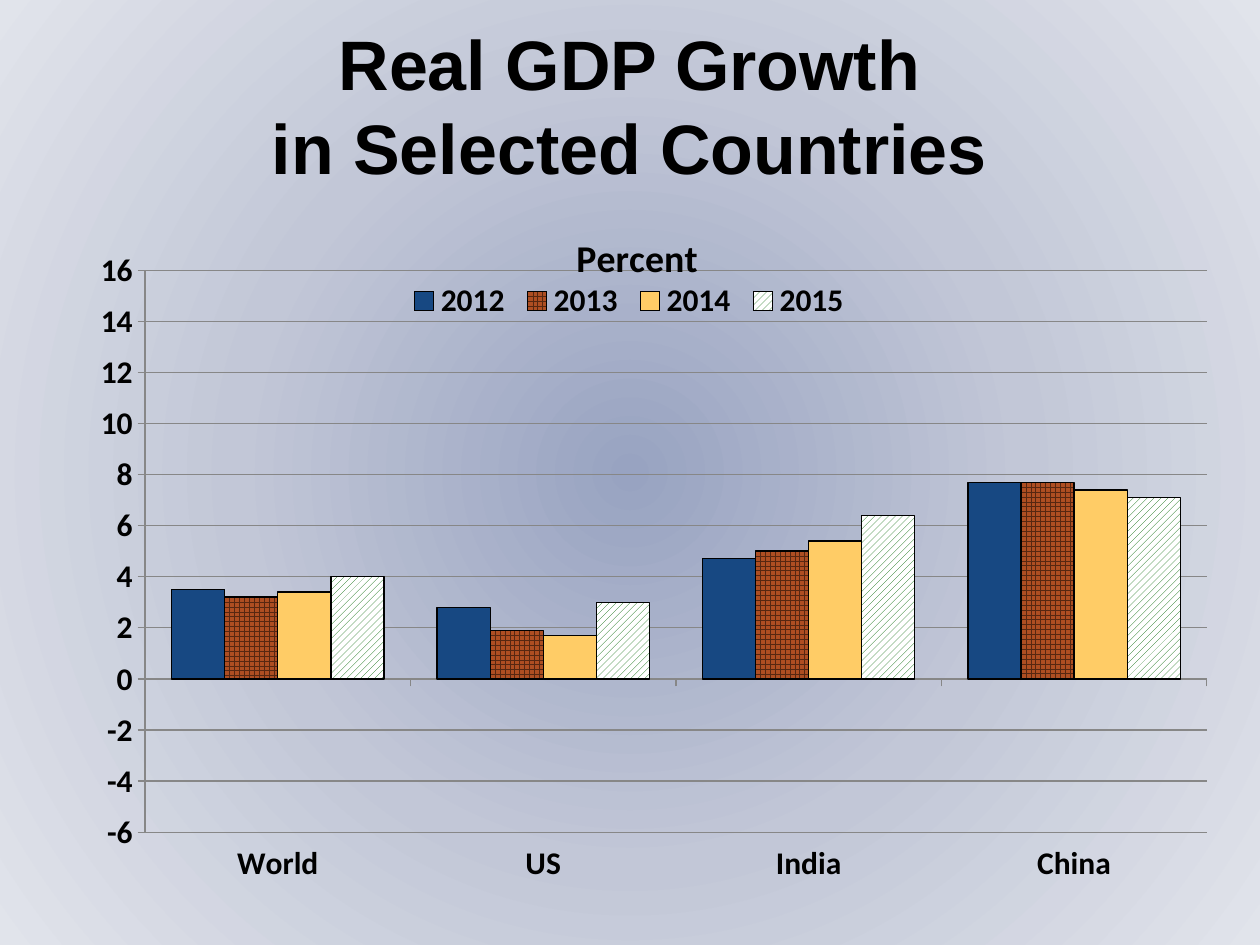
from lxml.etree import SubElement
from pptx import Presentation
from pptx.chart.data import CategoryChartData
from pptx.dml.color import RGBColor
from pptx.enum.chart import XL_CHART_TYPE, XL_LEGEND_POSITION, XL_TICK_LABEL_POSITION, XL_TICK_MARK
from pptx.enum.dml import MSO_PATTERN
from pptx.enum.text import MSO_ANCHOR, PP_ALIGN
from pptx.oxml.ns import qn
from pptx.util import Inches, Pt

COUNTRIES = ["World", "US", "India", "China"]
# year: growth, fill colour, pattern, pattern background
GROWTH = {
    "2012": ([3.5, 2.8, 4.7, 7.7], "174882", None, None),
    "2013": ([3.2, 1.9, 5, 7.7], "572711", MSO_PATTERN.LARGE_GRID, "AE4E22"),
    "2014": ([3.4, 1.7, 5.4, 7.4], "FFCC66", None, None),
    "2015": ([4, 3, 6.4, 7.1], "006600", MSO_PATTERN.WIDE_UPWARD_DIAGONAL, "FFFFFF"),
}
GRID_GRAY = "878787"


def rgb(color):
    return RGBColor.from_string(color)


def set_font(font, name, size):
    font.name = name
    font.size = Pt(size)
    font.bold = True
    font.color.rgb = rgb("000000")


def set_line(line, color):
    line.color.rgb = rgb(color)
    line.width = Pt(0.75)


def set_radial_background(slide, stops):
    fill = slide.background.fill
    fill.gradient()
    gradient = next(slide.element.iter(qn("a:gradFill")))
    for child in list(gradient):
        gradient.remove(child)
    stop_list = SubElement(gradient, qn("a:gsLst"))
    for position, color in stops:
        stop = SubElement(stop_list, qn("a:gs"), pos=str(position * 1000))
        SubElement(stop, qn("a:srgbClr"), val=color)
    circle = SubElement(gradient, qn("a:path"), {"path": "circle"})
    SubElement(circle, qn("a:fillToRect"), dict.fromkeys("ltrb", "50000"))


def set_title(slide, text):
    title = slide.shapes.title
    title.left, title.top = Inches(0.25), Inches(0.33)
    title.width, title.height = Inches(9.49), Inches(1)
    frame = title.text_frame
    frame.text = text
    frame.vertical_anchor = MSO_ANCHOR.MIDDLE
    for paragraph in frame.paragraphs:
        paragraph.alignment = PP_ALIGN.CENTER
        set_font(paragraph.font, "Arial", 40)


def place(element, index, inner=False, **fractions):
    """Give a chart part a manual layout in fractions of the chart area."""
    for old in element.findall(qn("c:layout")):
        element.remove(old)
    layout = element.makeelement(qn("c:layout"))
    element.insert(index, layout)
    manual = SubElement(layout, qn("c:manualLayout"))
    if inner:
        SubElement(manual, qn("c:layoutTarget"), val="inner")
    for side in "xy":
        SubElement(manual, qn(f"c:{side}Mode"), val="edge")
    for side, fraction in fractions.items():
        SubElement(manual, qn(f"c:{side}"), val=str(fraction))


def format_axes(chart):
    values, countries = chart.value_axis, chart.category_axis
    values.minimum_scale, values.maximum_scale, values.major_unit = -6, 16, 2
    values.has_major_gridlines = True
    set_line(values.major_gridlines.format.line, GRID_GRAY)
    countries.tick_label_position = XL_TICK_LABEL_POSITION.LOW
    for axis in (values, countries):
        axis.major_tick_mark = XL_TICK_MARK.OUTSIDE
        axis.minor_tick_mark = XL_TICK_MARK.NONE
        set_line(axis.format.line, GRID_GRAY)


def format_bars(plot):
    plot.gap_width = 100
    plot.overlap = 0
    plot.vary_by_categories = False
    for year in plot.series:
        _, color, pattern, back = GROWTH[year.name]
        fill = year.format.fill
        if pattern is None:
            fill.solid()
            fill.fore_color.rgb = rgb(color)
        else:
            fill.patterned()
            fill.pattern = pattern
            fill.fore_color.rgb = rgb(color)
            fill.back_color.rgb = rgb(back)
        set_line(year.format.line, "000000")


def add_growth_chart(slide):
    data = CategoryChartData()
    data.categories = COUNTRIES
    for year, (growth, *_) in GROWTH.items():
        data.add_series(year, growth)
    chart = slide.shapes.add_chart(
        XL_CHART_TYPE.COLUMN_CLUSTERED,
        Inches(0.25), Inches(1.5), Inches(9.49), Inches(5.66), data,
    ).chart
    set_font(chart.font, "Calibri", 18)

    chart.has_title = True
    heading = chart.chart_title.text_frame
    heading.text = "Percent"
    set_font(heading.paragraphs[0].font, "Calibri", 21.6)
    place(chart.chart_title._element, 1, x=0.45, y=0.05)

    chart.has_legend = True
    chart.legend.position = XL_LEGEND_POSITION.TOP
    chart.legend.include_in_layout = False
    set_font(chart.legend.font, "Calibri", 18)
    place(chart.legend._element, 1, x=0.31, y=0.13, w=0.38, h=0.05)

    format_axes(chart)
    format_bars(chart.plots[0])
    plot_area = next(chart.element.iter(qn("c:plotArea")))
    place(plot_area, 0, inner=True, x=0.095, y=0.114, w=0.888, h=0.788)


def main():
    deck = Presentation()
    deck.slide_width, deck.slide_height = Inches(10), Inches(7.5)
    slide = deck.slides.add_slide(deck.slide_layouts[5])
    set_radial_background(slide, [(0, "98A3C1"), (50, "C2C7D7"), (100, "E1E4EB")])
    set_title(slide, "Real GDP Growth\nin Selected Countries")
    add_growth_chart(slide)
    deck.save("out.pptx")


if __name__ == "__main__":
    main()
